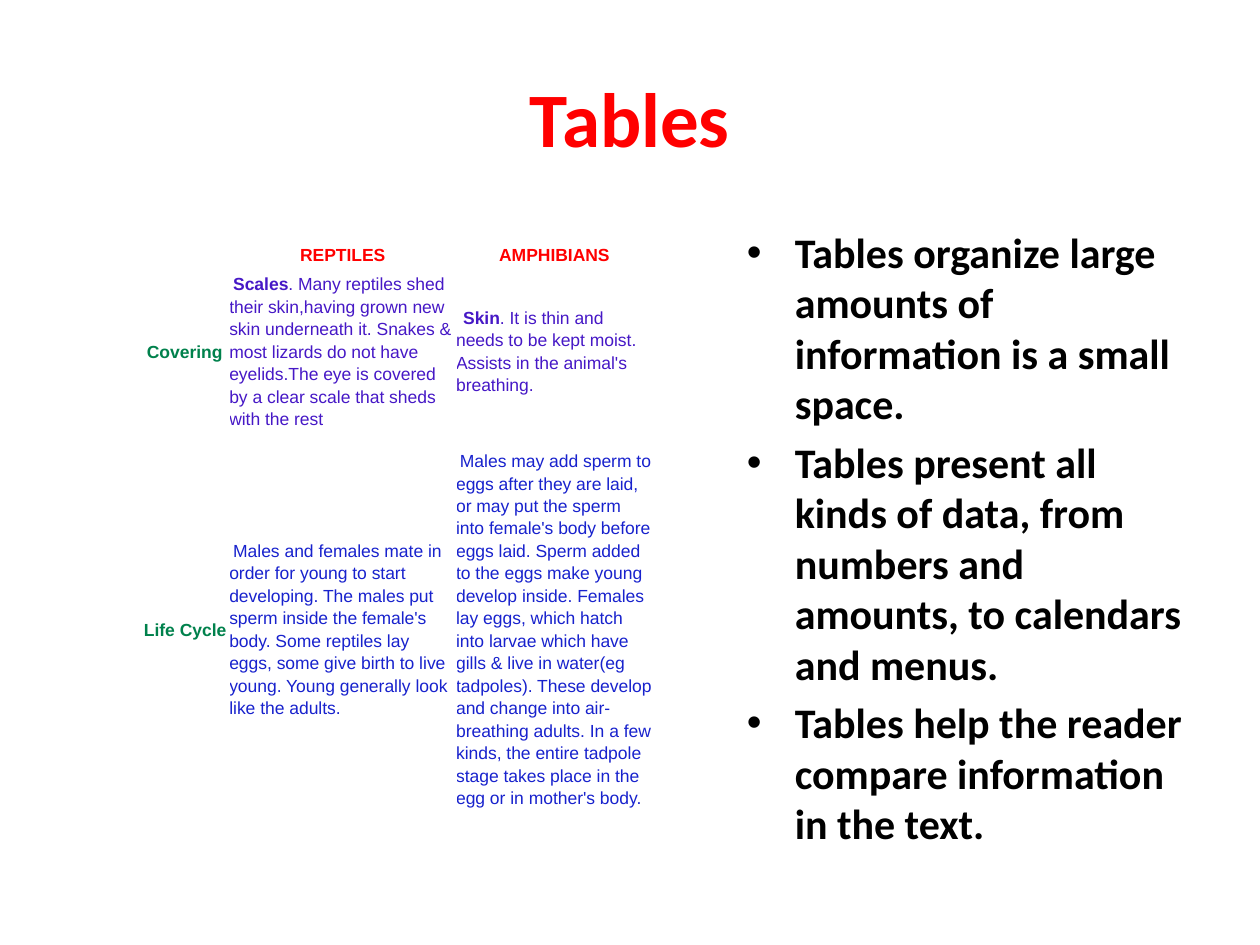
import dataclasses

import lxml.etree
import pptx
import pptx.dml.color
import pptx.enum.text
import pptx.oxml.ns
import pptx.util


@dataclasses.dataclass(frozen=True)
class TextStyle:
    font: str
    size: int
    color: str
    bold: bool = False


@dataclasses.dataclass(frozen=True)
class Theme:
    title: TextStyle = TextStyle("Calibri", 44, "FF0000", True)
    bullet: TextStyle = TextStyle("Calibri", 24, "000000", True)
    header: TextStyle = TextStyle("Arial", 10, "FF0000", True)
    label: TextStyle = TextStyle("Arial", 10, "00814C", True)
    term: TextStyle = TextStyle("Arial", 10, "4618C6", True)
    covering: TextStyle = TextStyle("Arial", 10, "4618C6")
    life_cycle: TextStyle = TextStyle("Arial", 10, "1822CD")
    lead: TextStyle = TextStyle("Times New Roman", 9, "000000")
    gap: TextStyle = TextStyle("Calibri", 8, "000000")
    cell_line_spacing: float = 1.15
    bullet_indent: float = 0.38
    bullet_space: float = 0.2


THEME = Theme()
SLIDE_WIDTH, SLIDE_HEIGHT = 10, 7.5
COLUMN_WIDTHS = (0.74, 1.8, 1.56)
ROW_HEIGHTS = (0.19, 1.3, 2.96)
TITLE_BOX = (0.05, 0.04, 0.9, 1 / 6)
TABLE_BOX = (0.108, 0.256, sum(COLUMN_WIDTHS) / SLIDE_WIDTH, sum(ROW_HEIGHTS) / SLIDE_HEIGHT)
BULLET_BOX = (0.583, 0.233, 0.367, 0.66)

BULLETS = (
    "Tables organize large amounts of information is a small space.",
    "Tables present all kinds of data, from numbers and amounts, to calendars and menus.",
    "Tables help the reader compare information in the text.",
)

LEAD = (" ", THEME.lead)
CELLS = (
    (
        (),
        (("REPTILES", THEME.header),),
        (("AMPHIBIANS", THEME.header),),
    ),
    (
        (LEAD, ("Covering", THEME.label)),
        (
            LEAD,
            ("Scales", THEME.term),
            (". Many reptiles shed their skin,having grown new skin underneath it. "
             "Snakes & most lizards do not have eyelids.The eye is covered by a clear "
             "scale that sheds with the rest", THEME.covering),
        ),
        (
            LEAD,
            (" ", THEME.gap),
            ("Skin", THEME.term),
            (". It is thin and needs to be kept moist. Assists in the animal's breathing.",
             THEME.covering),
        ),
    ),
    (
        ((" Life Cycle", THEME.label),),
        (
            LEAD,
            ("Males and females mate in order for young to start developing. The males "
             "put sperm inside the female's body. Some reptiles lay eggs, some give birth "
             "to live young. Young generally look like the adults.", THEME.life_cycle),
        ),
        (
            LEAD,
            ("Males may add sperm to eggs after they are laid, or may put the sperm into "
             "female's body before eggs laid. Sperm added to the eggs make young develop "
             "inside. Females lay eggs, which hatch into larvae which have gills & live in "
             "water(eg tadpoles). These develop and change into air-breathing adults. In a "
             "few kinds, the entire tadpole stage takes place in the egg or in mother's body.",
             THEME.life_cycle),
        ),
    ),
)


def place(box):
    extents = (SLIDE_WIDTH, SLIDE_HEIGHT) * 2
    return [pptx.util.Inches(share * extent) for share, extent in zip(box, extents)]


def format_run(run, style):
    run.font.name = style.font
    run.font.size = pptx.util.Pt(style.size)
    run.font.bold = style.bold
    run.font.color.rgb = pptx.dml.color.RGBColor.from_string(style.color)


def add_title(slide, text):
    title = slide.shapes.title
    title.left, title.top, title.width, title.height = place(TITLE_BOX)
    title.text_frame.text = text
    title.text_frame.vertical_anchor = pptx.enum.text.MSO_ANCHOR.MIDDLE
    paragraph = title.text_frame.paragraphs[0]
    paragraph.alignment = pptx.enum.text.PP_ALIGN.CENTER
    format_run(paragraph.runs[0], THEME.title)


def add_bullet(paragraph):
    properties = paragraph._p.get_or_add_pPr()
    indent = pptx.util.Inches(THEME.bullet_indent)
    properties.set("marL", str(indent))
    properties.set("indent", str(-indent))
    font = lxml.etree.SubElement(properties, pptx.oxml.ns.qn("a:buFont"))
    font.set("typeface", "Arial")
    character = lxml.etree.SubElement(properties, pptx.oxml.ns.qn("a:buChar"))
    character.set("char", "•")


def add_bullet_list(slide, lines):
    text_frame = slide.shapes.add_textbox(*place(BULLET_BOX)).text_frame
    text_frame.word_wrap = True
    text_frame.text = "\n".join(lines)
    for paragraph in text_frame.paragraphs:
        paragraph.space_before = pptx.util.Pt(THEME.bullet.size * THEME.bullet_space)
        add_bullet(paragraph)
        format_run(paragraph.runs[0], THEME.bullet)


def fill_cell(cell, pieces, centered):
    cell.fill.background()
    cell.margin_left = cell.margin_right = cell.margin_top = cell.margin_bottom = 0
    cell.vertical_anchor = pptx.enum.text.MSO_ANCHOR.MIDDLE
    paragraph = cell.text_frame.paragraphs[0]
    paragraph.line_spacing = THEME.cell_line_spacing
    if centered:
        paragraph.alignment = pptx.enum.text.PP_ALIGN.CENTER
    for text, style in pieces:
        run = paragraph.add_run()
        run.text = text
        format_run(run, style)
    if not pieces:
        ending = lxml.etree.SubElement(paragraph._p, pptx.oxml.ns.qn("a:endParaRPr"))
        ending.set("sz", str(THEME.gap.size * 100))


def add_comparison_table(slide):
    frame = slide.shapes.add_table(len(ROW_HEIGHTS), len(COLUMN_WIDTHS), *place(TABLE_BOX))
    table = frame.table
    table.first_row = False
    table.horz_banding = False
    for column, width in zip(table.columns, COLUMN_WIDTHS):
        column.width = pptx.util.Inches(width)
    for row, height in zip(table.rows, ROW_HEIGHTS):
        row.height = pptx.util.Inches(height)
    for row_index, row in enumerate(CELLS):
        for column_index, pieces in enumerate(row):
            centered = row_index == 0 or column_index == 0
            fill_cell(table.cell(row_index, column_index), pieces, centered)


def main():
    presentation = pptx.Presentation()
    presentation.slide_width = pptx.util.Inches(SLIDE_WIDTH)
    presentation.slide_height = pptx.util.Inches(SLIDE_HEIGHT)
    slide = presentation.slides.add_slide(presentation.slide_layouts.get_by_name("Title Only"))
    add_title(slide, "Tables")
    add_bullet_list(slide, BULLETS)
    add_comparison_table(slide)
    presentation.save("out.pptx")


if __name__ == "__main__":
    main()
